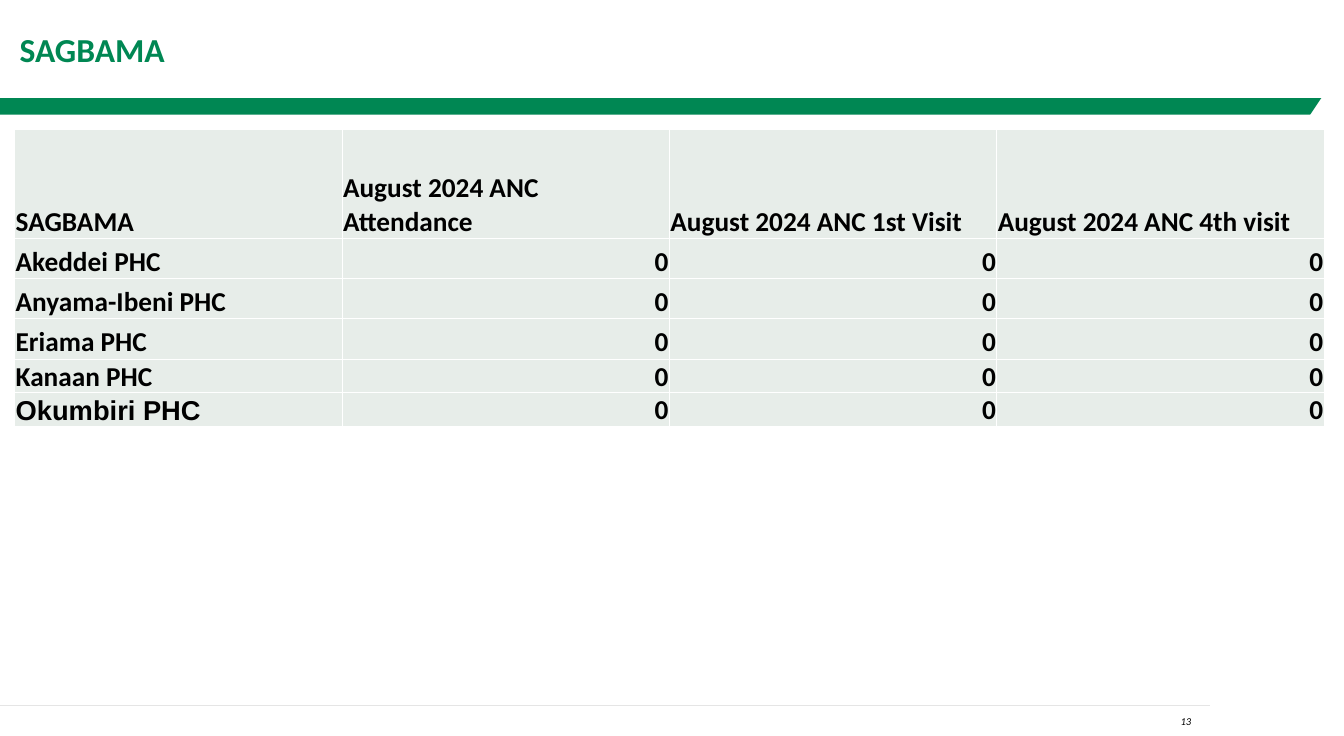
from lxml import etree
from pptx import Presentation
from pptx.dml.color import RGBColor
from pptx.enum.shapes import MSO_CONNECTOR, MSO_SHAPE
from pptx.enum.text import MSO_ANCHOR, PP_ALIGN
from pptx.oxml.ns import qn
from pptx.util import Inches, Pt

LEFT, RIGHT = PP_ALIGN.LEFT, PP_ALIGN.RIGHT
TOP, MIDDLE, BOTTOM = MSO_ANCHOR.TOP, MSO_ANCHOR.MIDDLE, MSO_ANCHOR.BOTTOM
RECTANGLE, TRIANGLE = MSO_SHAPE.RECTANGLE, MSO_SHAPE.ISOSCELES_TRIANGLE

TITLE = "SAGBAMA"
PAGE_NUMBER = "13"
HEADERS = ["SAGBAMA", "August 2024 ANC Attendance",
           "August 2024 ANC 1st Visit", "August 2024 ANC 4th visit"]
FACILITIES = [
    ("Akeddei PHC", 0, 0, 0),
    ("Anyama-Ibeni PHC", 0, 0, 0),
    ("Eriama PHC", 0, 0, 0),
    ("Kanaan PHC", 0, 0, 0),
    ("Okumbiri PHC", 0, 0, 0),
]
ARIAL_LABELS = {"Okumbiri PHC"}

COLORS = {"green": "008753", "white": "FFFFFF", "rule": "E5E5E5",
          "cell": "E7EDE9", "text": "000000"}
SLIDE_W, SLIDE_H = 13.69, 7.5
BAND_TOP = 1
BAND_W = 13.46
NOTCH_W = 0.28
RULE_Y = 7.19
TABLE_LEFT, TABLE_TOP, TABLE_W = 0.15, 1.32, 13.34
ROW_HEIGHTS = [1.11] + 3 * [0.41] + 2 * [0.25]


def color(name):
    return RGBColor.from_string(COLORS[name])


def style_text(paragraph, size, color_name, font="Calibri", bold=False, italic=False, align=LEFT):
    paragraph.alignment = align
    paragraph.font.name = font
    paragraph.font.size = Pt(size)
    paragraph.font.bold = bold
    paragraph.font.italic = italic
    paragraph.font.color.rgb = color(color_name)


def add_text(slide, text, box, anchor, **style):
    frame = slide.shapes.add_textbox(*map(Inches, box)).text_frame
    frame.word_wrap = True
    frame.vertical_anchor = anchor
    frame.text = text
    style_text(frame.paragraphs[0], **style)
    return frame


def add_filled(slide, kind, box, color_name):
    shape = slide.shapes.add_shape(kind, *map(Inches, box))
    shape.shadow.inherit = False
    shape.fill.solid()
    shape.fill.fore_color.rgb = color(color_name)
    shape.line.fill.background()


def add_footer_rule(slide):
    rule = slide.shapes.add_connector(MSO_CONNECTOR.STRAIGHT, 0, Inches(RULE_Y),
                                      Inches(0.9 * SLIDE_W), Inches(RULE_Y))
    rule.line.color.rgb = color("rule")
    rule.line.width = Pt(1)
    etree.SubElement(rule._element.spPr, qn("a:effectLst"))


def add_borders(cell):
    properties = cell._tc.get_or_add_tcPr()
    for side in ("a:lnL", "a:lnR", "a:lnT", "a:lnB"):
        border = etree.SubElement(properties, qn(side), w=str(Pt(1)))
        fill = etree.SubElement(border, qn("a:solidFill"))
        etree.SubElement(fill, qn("a:srgbClr"), val=COLORS["white"])


def fill_cell(cell, value):
    add_borders(cell)
    cell.fill.solid()
    cell.fill.fore_color.rgb = color("cell")
    cell.vertical_anchor = BOTTOM
    cell.margin_left = cell.margin_right = cell.margin_top = Inches(0.01)
    cell.margin_bottom = 0
    cell.text = str(value)
    style_text(cell.text_frame.paragraphs[0], 20, "text", bold=True,
               font="Arial" if value in ARIAL_LABELS else "Calibri",
               align=RIGHT if isinstance(value, int) else LEFT)


def add_visit_table(slide):
    rows = [HEADERS, *FACILITIES]
    box = (TABLE_LEFT, TABLE_TOP, TABLE_W, sum(ROW_HEIGHTS))
    table = slide.shapes.add_table(len(rows), len(HEADERS), *map(Inches, box)).table
    table.first_row = table.horz_banding = False
    for column in table.columns:
        column.width = Inches(TABLE_W / len(HEADERS))
    for r, (values, height) in enumerate(zip(rows, ROW_HEIGHTS)):
        table.rows[r].height = Inches(height)
        for c, value in enumerate(values):
            fill_cell(table.cell(r, c), value)


def main():
    deck = Presentation()
    deck.slide_width, deck.slide_height = Inches(SLIDE_W), Inches(SLIDE_H)
    slide = deck.slides.add_slide(deck.slide_layouts[6])

    add_filled(slide, RECTANGLE, (0, BAND_TOP, BAND_W, 0.17), "green")
    add_filled(slide, TRIANGLE, (BAND_W - NOTCH_W / 2, BAND_TOP, NOTCH_W, 0.21), "white")
    add_footer_rule(slide)
    title = add_text(slide, TITLE, (0, 0, SLIDE_W, 0.99), MIDDLE,
                     size=24.6, color_name="green", bold=True)
    title.margin_left = Inches(0.2)
    add_text(slide, PAGE_NUMBER, (0.8 * SLIDE_W, 7.24, 1.28, 0.24), TOP,
             size=7.7, color_name="text", italic=True, align=RIGHT)
    add_visit_table(slide)
    deck.save("out.pptx")


if __name__ == "__main__":
    main()
